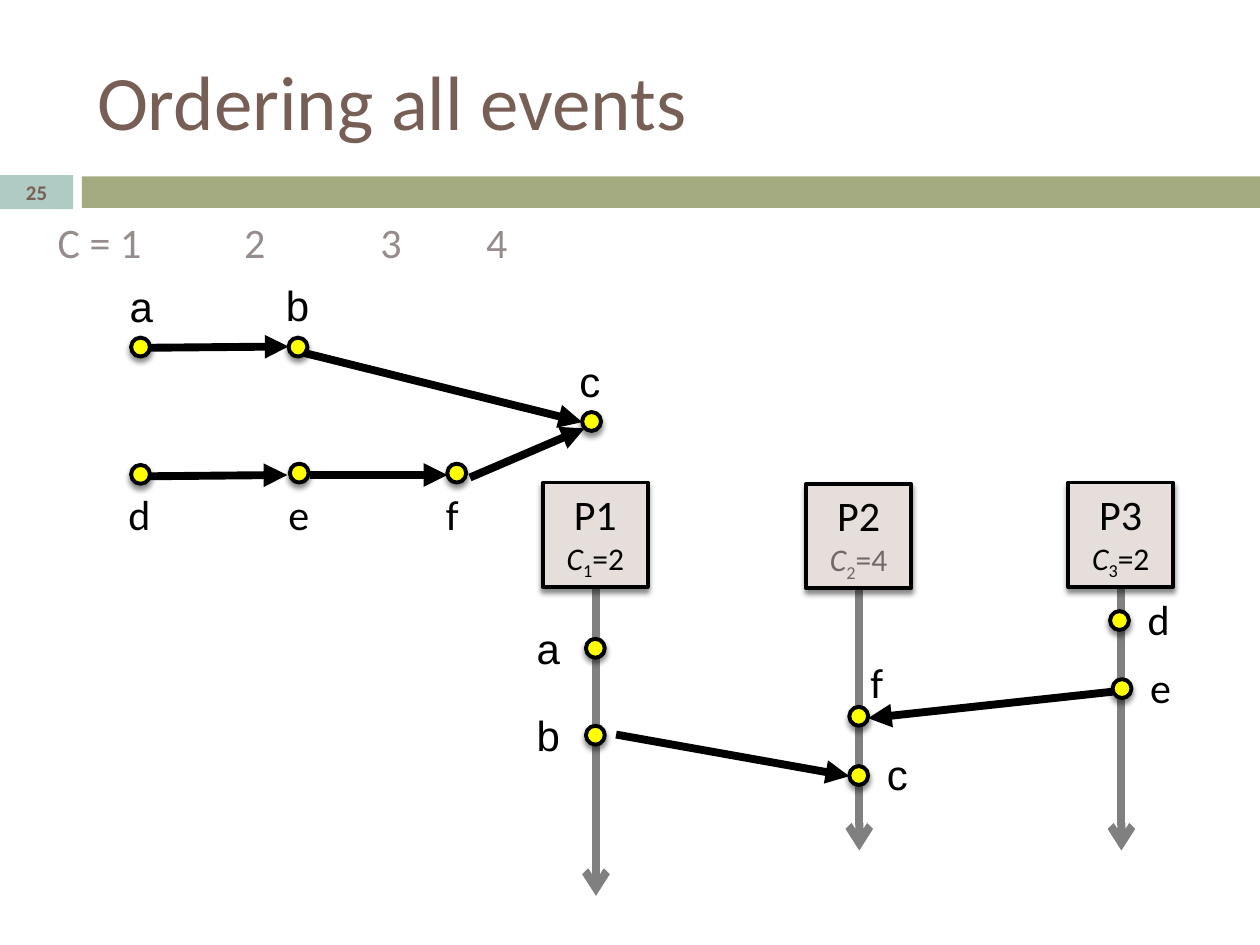
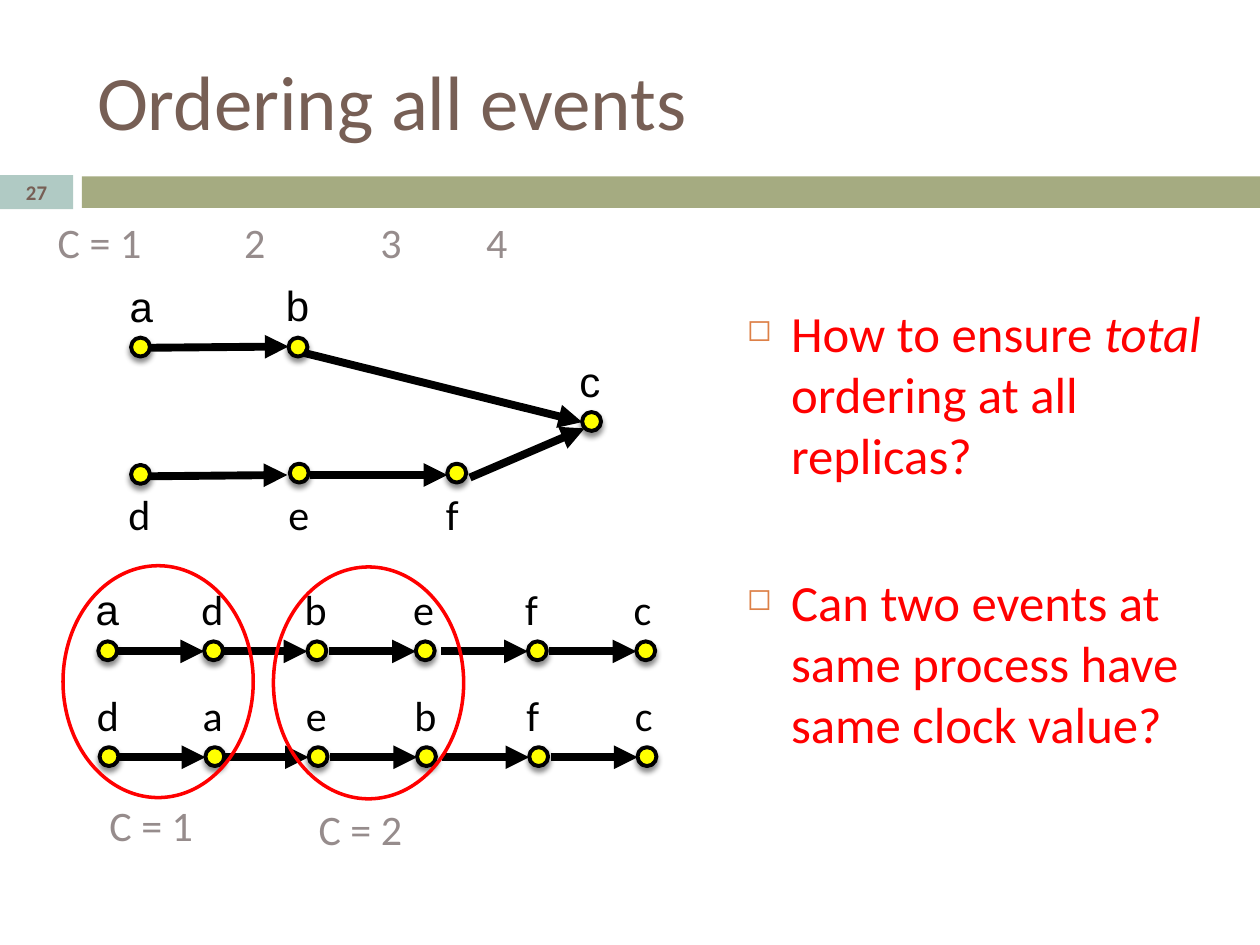
import lxml.etree
import pptx
import pptx.dml.color
import pptx.enum.shapes
import pptx.enum.text
import pptx.oxml
import pptx.oxml.ns
import pptx.util

PX = 9144
BLACK, RED, GREY, BROWN = "000000", "FF0000", "968C8C", "775F55"
SHAPES = pptx.enum.shapes.MSO_SHAPE
STRAIGHT = pptx.enum.shapes.MSO_CONNECTOR.STRAIGHT
MIDDLE = pptx.enum.text.MSO_ANCHOR.MIDDLE
LEFT = pptx.enum.text.PP_ALIGN.LEFT
CENTER = pptx.enum.text.PP_ALIGN.CENTER
color = pptx.dml.color.RGBColor.from_string
qn = pptx.oxml.ns.qn
SHADOW = (
    f'<a:outerShdw {pptx.oxml.ns.nsdecls("a")} blurRad="38100" dist="30000" dir="5400000" '
    'rotWithShape="0"><a:srgbClr val="000000"><a:alpha val="45000"/></a:srgbClr></a:outerShdw>'
)


def add_shape(slide, kind, box, fill=None, line=None, width=2.25, shadow=False):
    shape = slide.shapes.add_shape(kind, *[length * PX for length in box])
    if fill:
        shape.fill.solid()
        shape.fill.fore_color.rgb = color(fill)
    else:
        shape.fill.background()
    if line:
        shape.line.color.rgb = color(line)
        shape.line.width = pptx.util.Pt(width)
    else:
        shape.line.fill.background()
    shape.shadow.inherit = False
    if shadow:
        effects = shape._element.spPr.find(qn("a:effectLst"))
        effects.append(pptx.oxml.parse_xml(SHADOW))
    return shape


def add_run(paragraph, text, size=24, hue=BLACK, font="Calibri", bold=False, italic=False):
    run = paragraph.add_run()
    run.text = text
    run.font.size = pptx.util.Pt(size)
    run.font.name = font
    run.font.bold = bold
    run.font.italic = italic
    run.font.color.rgb = color(hue)
    return run


graph_events = [
    ("a", 104, 268, 93, 218, "Arial"),
    ("b", 229, 268, 217, 217, "Arial"),
    ("c", 462, 327, 450, 277, "Arial"),
    ("d", 104, 369, 92, 383, "Calibri"),
    ("e", 230, 368, 219, 383, "Calibri"),
    ("f", 355, 368, 344, 383, "Calibri"),
]
graph_arrows = [
    (120, 276, 229, 275),
    (241, 280, 462, 335),
    (119, 378, 228, 377),
    (246, 377, 355, 377),
    (373, 379, 464, 340),
]

process_events = [
    ("a", 465, 507, 416, 489, "Arial"),
    ("b", 465, 576, 416, 558, "Arial"),
    ("c", 674, 608, 694, 589, "Arial"),
    ("d", 881, 485, 901, 466, "Calibri"),
    ("e", 883, 539, 903, 520, "Calibri"),
    ("f", 674, 561, 681, 516, "Calibri"),
]
process_arrows = [(489, 583, 674, 616), (883, 549, 689, 570)]
processes = [
    ("1", "2", 431, 383, 711, BLACK),
    ("2", "4", 640, 384, 675, "726868"),
    ("3", "2", 848, 383, 675, BLACK),
]

order_events, order_arrows = [], []
order_columns = [78, 162, 244, 330, 419, 505]
for row, order in enumerate(["adbefc", "daebfc"]):
    top = 509 + 84 * row
    for column, (name, left) in enumerate(zip(order, order_columns)):
        left += row
        font = "Arial" if row == column == 0 else "Calibri"
        order_events.append((name, left, top, left - 12, top - 51, font))
        if column:
            order_arrows.append((left - 69, top + 8, left, top + 8))

clock_groups = [("C = 1", 50, 449, 77, 630), ("C = 2", 217, 450, 243, 633)]
questions = [
    (0, [("How to ensure ", False), ("total", True), (" ordering at all replicas?", False)]),
    (49, [("Can two events at same process have same clock value?", False)]),
]

slide_contents = [
    ("25", process_events, process_arrows, processes, [], []),
    ("27", order_events, order_arrows, [], clock_groups, questions),
]

presentation = pptx.Presentation()
presentation.slide_width = 1000 * PX
presentation.slide_height = 750 * PX

for number, events, arrows, lanes, groups, bullets in slide_contents:
    slide = presentation.slides.add_slide(presentation.slide_layouts[5])

    title = slide.shapes.title
    title.left, title.top, title.width, title.height = 67 * PX, 25 * PX, 892 * PX, 108 * PX
    title.text_frame.vertical_anchor = MIDDLE
    title.text_frame.paragraphs[0].alignment = LEFT
    add_run(title.text_frame.paragraphs[0], "Ordering all events", 44, BROWN)

    add_shape(slide, SHAPES.RECTANGLE, (65, 140, 935, 25), "A5AB81")
    badge = add_shape(slide, SHAPES.RECTANGLE, (0, 139, 58, 27), "B0CAC4")
    badge.text_frame.vertical_anchor = MIDDLE
    badge.text_frame.margin_top = badge.text_frame.margin_bottom = 0
    badge.text_frame.paragraphs[0].alignment = CENTER
    add_run(badge.text_frame.paragraphs[0], number, 11.9, BROWN, bold=True)

    clock_row = slide.shapes.add_textbox(36 * PX, 167 * PX, 455 * PX, 50 * PX)
    clock_row.text_frame.word_wrap = True
    paragraph = clock_row.text_frame.paragraphs[0]
    tabs = lxml.etree.SubElement(paragraph._p.get_or_add_pPr(), qn("a:tabLst"))
    for stop in (148, 256, 340):
        lxml.etree.SubElement(tabs, qn("a:tab"), pos=str(stop * PX), algn="l")
    add_run(paragraph, "C = 1\t2\t3\t4", hue=GREY)

    lines = [(left + 42, top + 82, left + 42, end, "808080", "arrow")
             for _, _, left, top, end, _ in lanes]
    lines += [(*ends, BLACK, "triangle") for ends in graph_arrows + arrows]
    for index, (x1, y1, x2, y2, hue, head) in enumerate(lines):
        if index == len(lanes):
            for process, clock, left, top, _, clock_hue in lanes:
                box = add_shape(slide, SHAPES.FLOWCHART_PROCESS, (left, top, 83, 83),
                                "E6DEDB", BLACK, shadow=True)
                box.text_frame.vertical_anchor = MIDDLE
                name_line = box.text_frame.paragraphs[0]
                clock_line = box.text_frame.add_paragraph()
                name_line.alignment = clock_line.alignment = CENTER
                add_run(name_line, "P" + process)
                add_run(clock_line, "C", 18, clock_hue, italic=True)
                subscript = add_run(clock_line, process, 18, clock_hue)
                subscript._r.get_or_add_rPr().set("baseline", "-25000")
                add_run(clock_line, "=" + clock, 18, clock_hue)
            for name, left, top, label_left, label_top, font in graph_events + events:
                add_shape(slide, SHAPES.OVAL, (left, top, 15, 15), "FFFF00", BLACK, shadow=True)
                width = {"b": 41, "d": 41, "f": 31}.get(name, 39)
                label = slide.shapes.add_textbox(
                    label_left * PX, label_top * PX, width * PX, 50 * PX)
                label.text_frame.word_wrap = False
                add_run(label.text_frame.paragraphs[0], name, font=font)
        connector = slide.shapes.add_connector(STRAIGHT, x1 * PX, y1 * PX, x2 * PX, y2 * PX)
        connector.line.color.rgb = color(hue)
        connector.line.width = pptx.util.Pt(4.5)
        lxml.etree.SubElement(connector.line._get_or_add_ln(), qn("a:tailEnd"), type=head)
        lxml.etree.SubElement(connector._element.spPr, qn("a:effectLst"))

    for caption, left, top, caption_left, caption_top in groups:
        add_shape(slide, SHAPES.OVAL, (left, top, 151, 184), line=RED, width=2)
        label = slide.shapes.add_textbox(caption_left * PX, caption_top * PX, 102 * PX, 50 * PX)
        label.text_frame.word_wrap = False
        add_run(label.text_frame.paragraphs[0], caption, hue=GREY)

    if bullets:
        body = slide.shapes.add_textbox(583 * PX, 235 * PX, 383 * PX, 423 * PX)
        body.text_frame.word_wrap = True
        for index, (space, parts) in enumerate(bullets):
            paragraph = body.text_frame.add_paragraph() if index else body.text_frame.paragraphs[0]
            paragraph.space_before = pptx.util.Pt(space)
            properties = paragraph._p.get_or_add_pPr()
            properties.set("marL", str(35 * PX))
            properties.set("indent", str(-35 * PX))
            bullet_color = lxml.etree.SubElement(properties, qn("a:buClr"))
            lxml.etree.SubElement(bullet_color, qn("a:srgbClr"), val="DD8047")
            lxml.etree.SubElement(properties, qn("a:buSzPct"), val="60000")
            lxml.etree.SubElement(properties, qn("a:buChar"), char="◻")
            for text, italic in parts:
                add_run(paragraph, text, 29, RED, italic=italic)

presentation.save("out.pptx")
